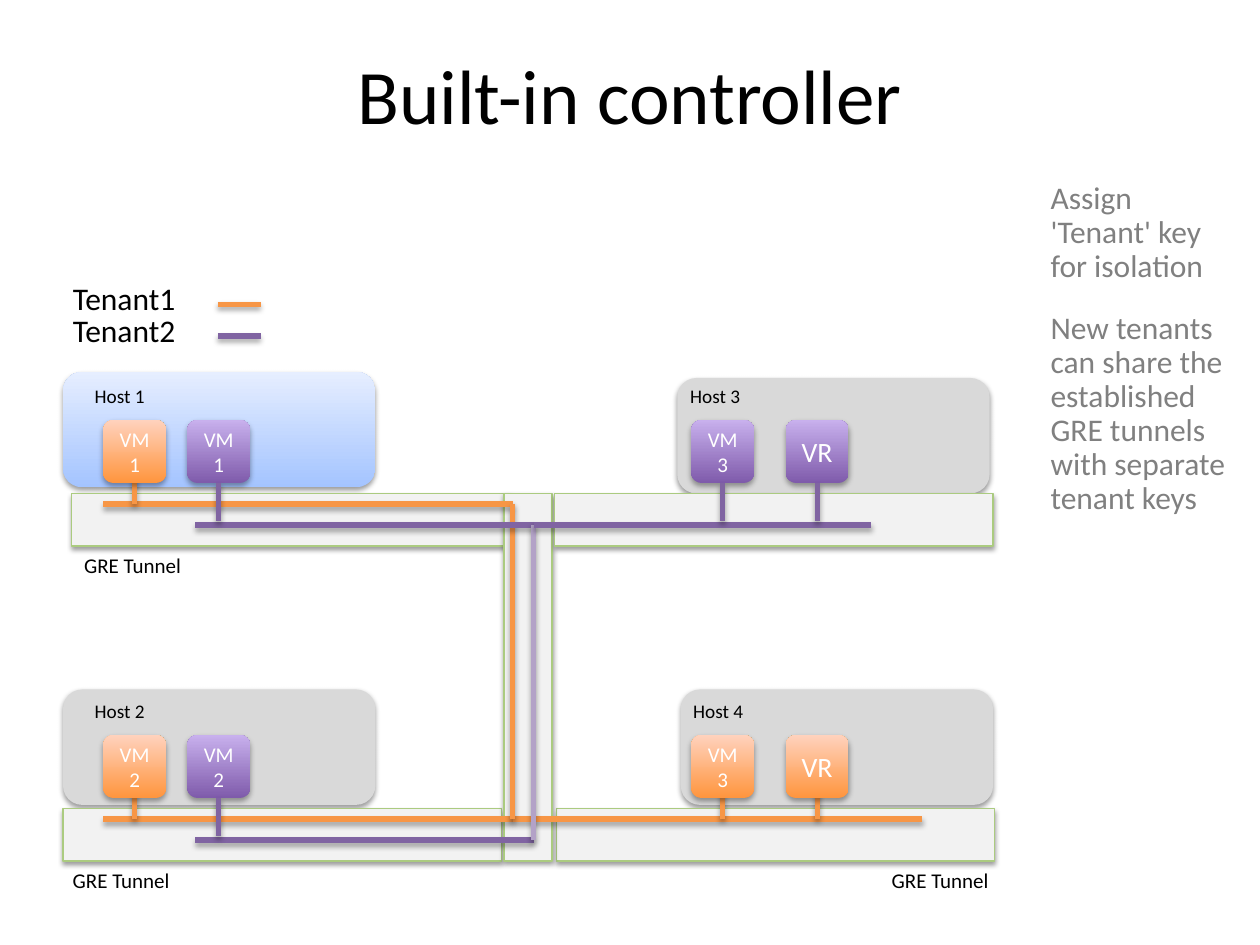
from lxml.etree import SubElement as Sub
from pptx import Presentation
from pptx.dml.color import RGBColor as RGB
from pptx.enum.shapes import MSO_CONNECTOR as Conn, MSO_SHAPE as Kind
from pptx.enum.text import MSO_ANCHOR as Anchor, MSO_AUTO_SIZE as Auto, PP_ALIGN as Align
from pptx.oxml.ns import qn
from pptx.util import Pt

ORANGE, PURPLE, LILAC = "F79646", "8064A2", "B3A2C7"
GREY, PALE, GREEN = "D9D9D9", "F2F2F2", "ABCB80"
FADES = {ORANGE: ("FF953E", "FFD2BD"), PURPLE: ("7F5BAB", "C8B0ED")}
BLUE = ("A4C4FF", "E6EEFF")
ROW = 180


def paint(color, code):
    color.rgb = RGB.from_string(code)


class Sketch:
    font = "Calibri"

    def __init__(self, slide):
        self.slide = slide
        self.shapes = slide.shapes

    def shade(self, item, dist, alpha):
        effect = Sub(item.element.spPr, qn("a:effectLst"))
        outer = Sub(effect, qn("a:outerShdw"), blurRad=str(Pt(3.1)),
                    dist=str(Pt(dist)), dir="5400000", rotWithShape="0")
        color = Sub(outer, qn("a:srgbClr"), val="000000")
        Sub(color, qn("a:alpha"), val=str(alpha * 1000))

    def style(self, frame, size, code, align):
        for para in frame.paragraphs:
            para.alignment = align
            for run in para.runs:
                run.font.name = self.font
                run.font.size = Pt(size)
                paint(run.font.color, code)

    def text(self, words, x, y, w, h, size, code="000000", align=Align.LEFT, wrap=False):
        box = self.shapes.add_textbox(Pt(x), Pt(y), Pt(w), Pt(h))
        frame = box.text_frame
        frame.text = words
        frame.word_wrap = wrap
        frame.auto_size = Auto.NONE if wrap else Auto.SHAPE_TO_FIT_TEXT
        self.style(frame, size, code, align)
        return frame

    def block(self, kind, x, y, w, h, fill, edge=None, dist=1.6, alpha=38):
        shape = self.shapes.add_shape(kind, Pt(x), Pt(y), Pt(w), Pt(h))
        if isinstance(fill, tuple):
            shape.fill.gradient()
            shape.fill.gradient_angle = 90
            for stop, code in zip(shape.fill.gradient_stops, fill):
                paint(stop.color, code)
        else:
            shape.fill.solid()
            paint(shape.fill.fore_color, fill)
        if edge:
            paint(shape.line.color, edge)
            shape.line.width = Pt(0.75)
        else:
            shape.line.fill.background()
        self.shade(shape, dist, alpha)
        return shape

    def host(self, x, y, fill=GREY):
        self.block(Kind.ROUNDED_RECTANGLE, x, y, 178.5, 66, fill)

    def tunnel(self, x, y, w=250.5, h=30):
        self.block(Kind.RECTANGLE, x, y, w, h, PALE, GREEN)

    def node(self, words, x, y, code):
        shape = self.block(Kind.ROUNDED_RECTANGLE, x, y, 36, 36, FADES[code],
                           dist=1.8, alpha=35)
        frame = shape.text_frame
        frame.text = words
        frame.word_wrap = True
        frame.vertical_anchor = Anchor.MIDDLE
        self.style(frame, 16 if words == "VR" else 12, "FFFFFF", Align.CENTER)
        return shape

    def wire(self, x1, y1, x2, y2, code, start=None):
        line = self.shapes.add_connector(Conn.STRAIGHT, Pt(x1), Pt(y1), Pt(x2), Pt(y2))
        if start is not None:
            line.begin_connect(start, 2)
        paint(line.line.color, code)
        line.line.width = Pt(3)
        self.shade(line, 1.8, 35)


def main():
    deck = Presentation()
    deck.slide_width, deck.slide_height = Pt(720), Pt(540)
    art = Sketch(deck.slides.add_slide(deck.slide_layouts[6]))

    art.text("Built-in controller", 0, 23.5, 720, 72, 44, align=Align.CENTER, wrap=True)
    notes = art.text("Assign 'Tenant' key for isolation\n"
                     "New tenants can share the established GRE tunnels with separate tenant keys",
                     593.3, 100.8, 116, 412.5, 18, "808080", wrap=True)
    for para in notes.paragraphs:
        para.line_spacing = 0.9
        para.space_before = Pt(13)
        para.space_after = Pt(2.7)

    for x, y, fill in ((36, 394, GREY), (389, 394, GREY), (36, 212.5, BLUE), (387, 216, GREY)):
        art.host(x, y, fill)
    for num, x, y in ((1, 47, 216), (2, 47, 396), (3, 387.3, 216), (4, 389, 396)):
        art.text(f"Host {num}", x, y, 43.5, 20.6, 11)

    for x, y in ((41, 282), (36, 462), (318, 462)):
        art.tunnel(x, y)
    art.tunnel(288, 282, 27.5, 210)
    art.tunnel(317, 282)
    for x, y in ((41, 312), (34.5, 492), (502.5, 492)):
        art.text("GRE Tunnel", x, y, 71.5, 21.8, 12)

    for ends in ((59, 288, 293, 288), (59, 468, 293, 468),
                 (293, 468, 527, 468), (293, 288, 293, 468)):
        art.wire(*ends, ORANGE)
    for ends, code in (((111.5, 300, 305, 300), PURPLE), ((111.5, 480, 305, 480), PURPLE),
                       ((305, 300, 305, 480), LILAC), ((305, 300, 498, 300), PURPLE)):
        art.wire(*ends, code)

    cols = 59, 107, 395, 449
    rows = (
        (("VM 1", ORANGE), ("VM 1", PURPLE), ("VM\n3", PURPLE), ("VR", PURPLE)),
        (("VM\n2", ORANGE), ("VM 2", PURPLE), ("VM\n3", ORANGE), ("VR", ORANGE)),
    )
    for level, row in enumerate(rows):
        top = 240 + ROW * level
        for x, (words, code) in zip(cols, row):
            mid = x + 18
            if code == ORANGE:
                art.wire(mid, top + 30, mid, top + 48, code)
            node = art.node(words, x, top, code)
            if code == PURPLE:
                art.wire(mid, top + 36, mid, top + 58, code, node)

    for num, code in enumerate((ORANGE, PURPLE)):
        y = 156 + 18 * num
        art.text(f"Tenant{num + 1}", 34.5, y, 75.5, 29, 18)
        art.wire(124.5, y + 18, 149, y + 18, code)

    deck.save("out.pptx")


if __name__ == "__main__":
    main()
